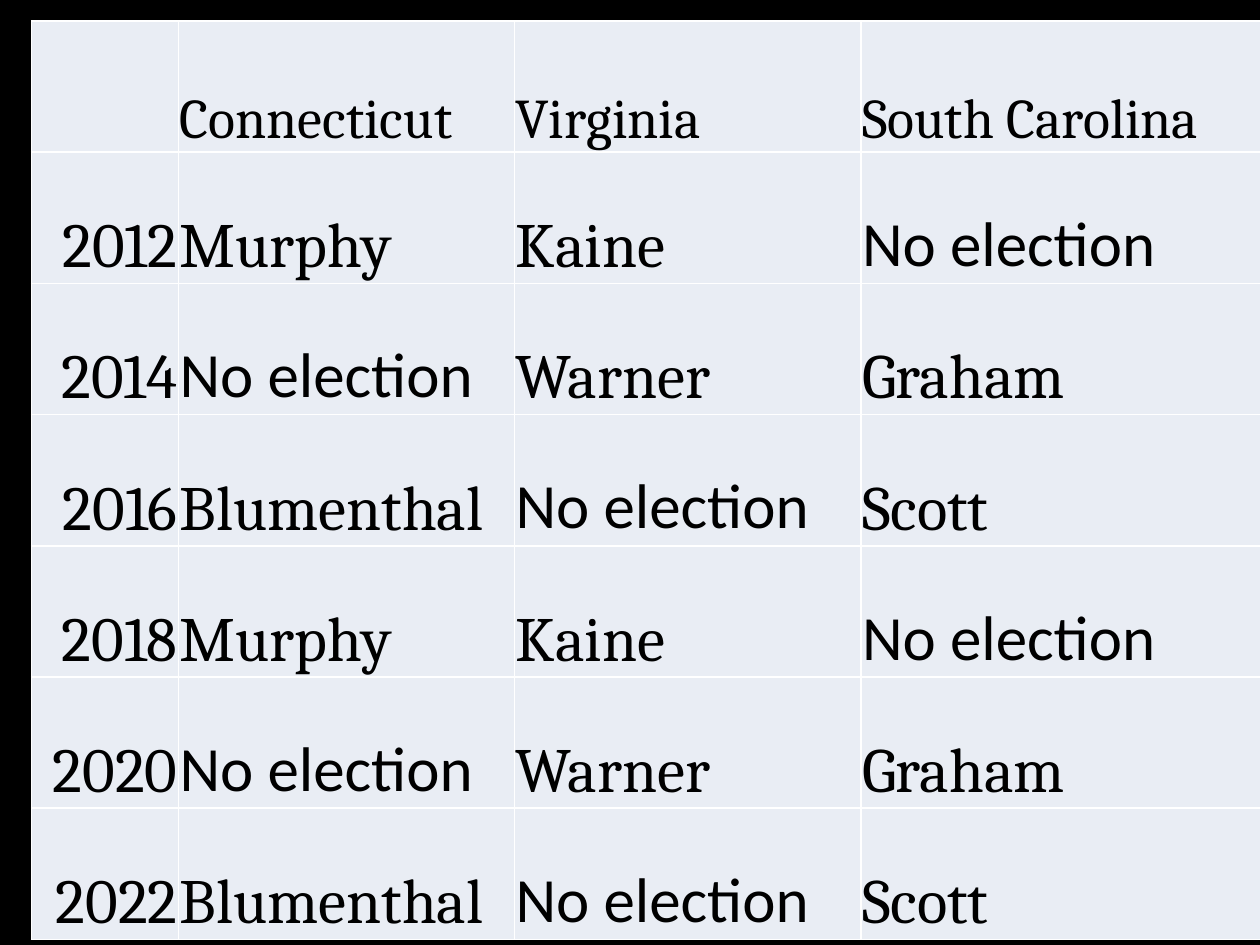
from lxml import etree
from pptx import Presentation
from pptx import util as u
from pptx.dml.color import RGBColor
from pptx.enum import text
from pptx.oxml.ns import qn

PX = 7620
BLACK = RGBColor(0x00, 0x00, 0x00)
WHITE = RGBColor(0xFF, 0xFF, 0xFF)
PALE = RGBColor(0xE9, 0xED, 0xF4)

COLUMN_WIDTHS = [140, 320, 330, 400]
ROW_HEIGHT = 125
NO_ELECTION = "No election"
STATES = ["", "Connecticut", "Virginia", "South Carolina"]
CYCLE = [
    ["Murphy", "Kaine", NO_ELECTION],
    [NO_ELECTION, "Warner", "Graham"],
    ["Blumenthal", NO_ELECTION, "Scott"],
]
YEARS = range(2012, 2023, 2)


def px(n):
    return u.Emu(n * PX)


def add_borders(cell):
    tcPr = cell._tc.get_or_add_tcPr()
    for side in ("lnL", "lnR", "lnT", "lnB"):
        ln = etree.SubElement(tcPr, qn(f"a:{side}"), w=str(u.Pt(1)))
        fill = etree.SubElement(ln, qn("a:solidFill"))
        etree.SubElement(fill, qn("a:srgbClr"), val=str(WHITE))


def format_cell(cell):
    add_borders(cell)
    cell.fill.solid()
    cell.fill.fore_color.rgb = PALE
    cell.vertical_anchor = text.MSO_ANCHOR.BOTTOM
    cell.margin_left = cell.margin_right = cell.margin_top = px(1)
    cell.margin_bottom = 0


def write_cell(cell, value, size, align):
    p = cell.text_frame.paragraphs[0]
    p.text = value
    p.alignment = align
    for r in p.runs:
        r.font.name = "Calibri" if value == NO_ELECTION else "Cambria"
        r.font.size = u.Pt(size)
        r.font.bold = False
        r.font.color.rgb = BLACK


def add_election_table(s, left, top):
    rows = [STATES] + [
        [str(year)] + CYCLE[i % len(CYCLE)] for i, year in enumerate(YEARS)
    ]
    table = s.shapes.add_table(
        len(rows), len(STATES), px(left), px(top),
        px(sum(COLUMN_WIDTHS)), px(ROW_HEIGHT * len(rows)),
    ).table
    table.first_row = table.horz_banding = False
    for column, width in zip(table.columns, COLUMN_WIDTHS):
        column.width = px(width)
    for i, values in enumerate(rows):
        table.rows[i].height = px(ROW_HEIGHT)
        for j, value in enumerate(values):
            cell = table.cell(i, j)
            format_cell(cell)
            align = text.PP_ALIGN.LEFT if j else text.PP_ALIGN.RIGHT
            write_cell(cell, value, 36 if i else 32, align)


def main():
    prs = Presentation()
    prs.slide_width, prs.slide_height = px(1200), px(900)
    s = prs.slides.add_slide(prs.slide_layouts[6])
    s.background.fill.solid()
    s.background.fill.fore_color.rgb = BLACK
    add_election_table(s, 30, 20)
    prs.save("out.pptx")


if __name__ == "__main__":
    main()
